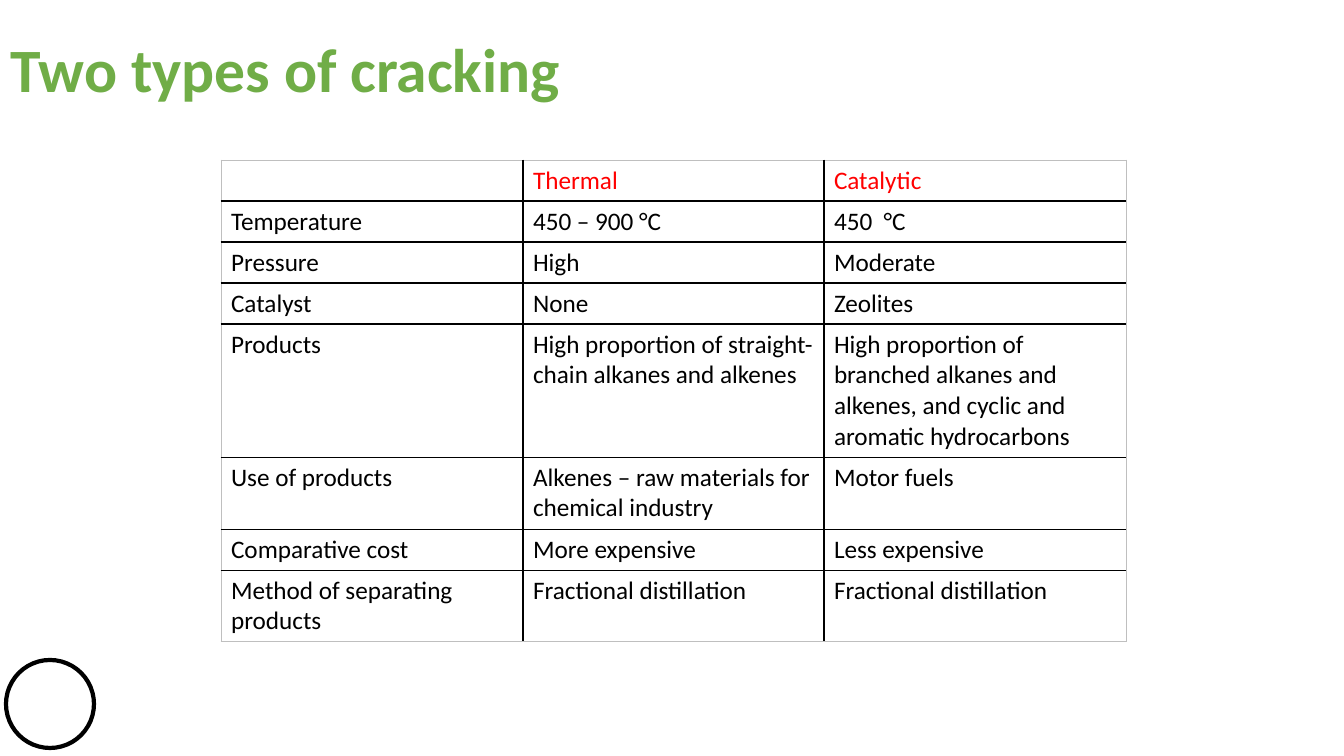
import pptx
import pptx.dml.color
import pptx.enum.shapes
import pptx.enum.text
import pptx.oxml
import pptx.oxml.ns
import pptx.util

SCALE = 914400 / 100.8
FONT = "Calibri"
COLORS = {"title": "70AD47", "heading": "FF0000", "text": "000000",
          "rule": "000000", "edge": "BFBFBF", "paper": "FFFFFF"}

ROWS = [
    ("", "Thermal", "Catalytic"),
    ("Temperature", "450 – 900 °C", "450  °C"),
    ("Pressure", "High", "Moderate"),
    ("Catalyst", "None", "Zeolites"),
    ("Products", "High proportion of straight-chain alkanes and alkenes",
     "High proportion of branched alkanes and alkenes, "
     "and cyclic and aromatic hydrocarbons"),
    ("Use of products", "Alkenes – raw materials for chemical industry",
     "Motor fuels"),
    ("Comparative cost", "More expensive", "Less expensive"),
    ("Method of separating products", "Fractional distillation",
     "Fractional distillation"),
]
ROW_HEIGHTS = [41, 41, 41, 41, 133, 72, 41, 71]
COLUMN_WIDTHS = [302, 301, 302]


def px(n):
    return pptx.util.Emu(round(n * SCALE))


def rgb(name):
    return pptx.dml.color.RGBColor.from_string(COLORS[name])


def format_font(font, color, **values):
    font.color.rgb = rgb(color)
    for name, value in {"name": FONT, **values}.items():
        setattr(font, name, value)


def place(s, left, top, width, height):
    for name, n in zip(("left", "top", "width", "height"),
                       (left, top, width, height)):
        setattr(s, name, px(n))


def add_title(slide, text):
    s = slide.shapes.title
    place(s, 0, 0, 1252, 146)
    tf = s.text_frame
    tf.vertical_anchor = pptx.enum.text.MSO_ANCHOR.MIDDLE
    p = tf.paragraphs[0]
    p.alignment = pptx.enum.text.PP_ALIGN.LEFT
    p.line_spacing = 0.9
    r = p.add_run()
    r.text = text
    format_font(r.font, "title", size=pptx.util.Pt(44), bold=True)


def add_ring(slide, left, top, size):
    s = slide.shapes.add_shape(pptx.enum.shapes.MSO_SHAPE.OVAL,
                               px(left), px(top), px(size), px(size))
    s.shadow.inherit = False
    s.fill.solid()
    s.fill.fore_color.rgb = rgb("paper")
    s.line.color.rgb = rgb("rule")
    s.line.width = pptx.util.Pt(3)


def set_borders(cell, outer):
    """Rule all four sides, with a thin pale line on the sides in outer."""
    tc_pr = cell._tc.get_or_add_tcPr()
    for i, side in enumerate("LRTB"):
        color, points = ("edge", 0.5) if side in outer else ("rule", 1)
        tc_pr.insert(i, pptx.oxml.parse_xml(
            f'<a:ln{side} {pptx.oxml.ns.nsdecls("a")} '
            f'w="{pptx.util.Pt(points)}"><a:solidFill>'
            f'<a:srgbClr val="{COLORS[color]}"/></a:solidFill></a:ln{side}>'))


def add_comparison(slide, left, top):
    n_rows, n_cols = len(ROWS), len(COLUMN_WIDTHS)
    table = slide.shapes.add_table(
        n_rows, n_cols, px(left), px(top),
        px(sum(COLUMN_WIDTHS)), px(sum(ROW_HEIGHTS))).table
    table.first_row = table.horz_banding = False
    for column, width in zip(table.columns, COLUMN_WIDTHS):
        column.width = px(width)
    for i, (texts, height) in enumerate(zip(ROWS, ROW_HEIGHTS)):
        table.rows[i].height = px(height)
        for j, text in enumerate(texts):
            cell = table.cell(i, j)
            cell.fill.background()
            edges = {"L": j == 0, "R": j == n_cols - 1,
                     "T": i == 0, "B": i == n_rows - 1}
            set_borders(cell, [side for side in edges if edges[side]])
            p = cell.text_frame.paragraphs[0]
            p.text = text
            format_font(p.font, "text", size=pptx.util.Pt(18))
            for r in p.runs:
                format_font(r.font, "text" if i else "heading",
                            size=pptx.util.Pt(18))


def main():
    prs = pptx.Presentation()
    prs.slide_width, prs.slide_height = px(1344), px(756)
    slide = prs.slides.add_slide(prs.slide_layouts[5])
    add_ring(slide, 6, 660, 88)
    add_comparison(slide, 221, 160)
    add_title(slide, "Two types of cracking")
    prs.save("out.pptx")


if __name__ == "__main__":
    main()
